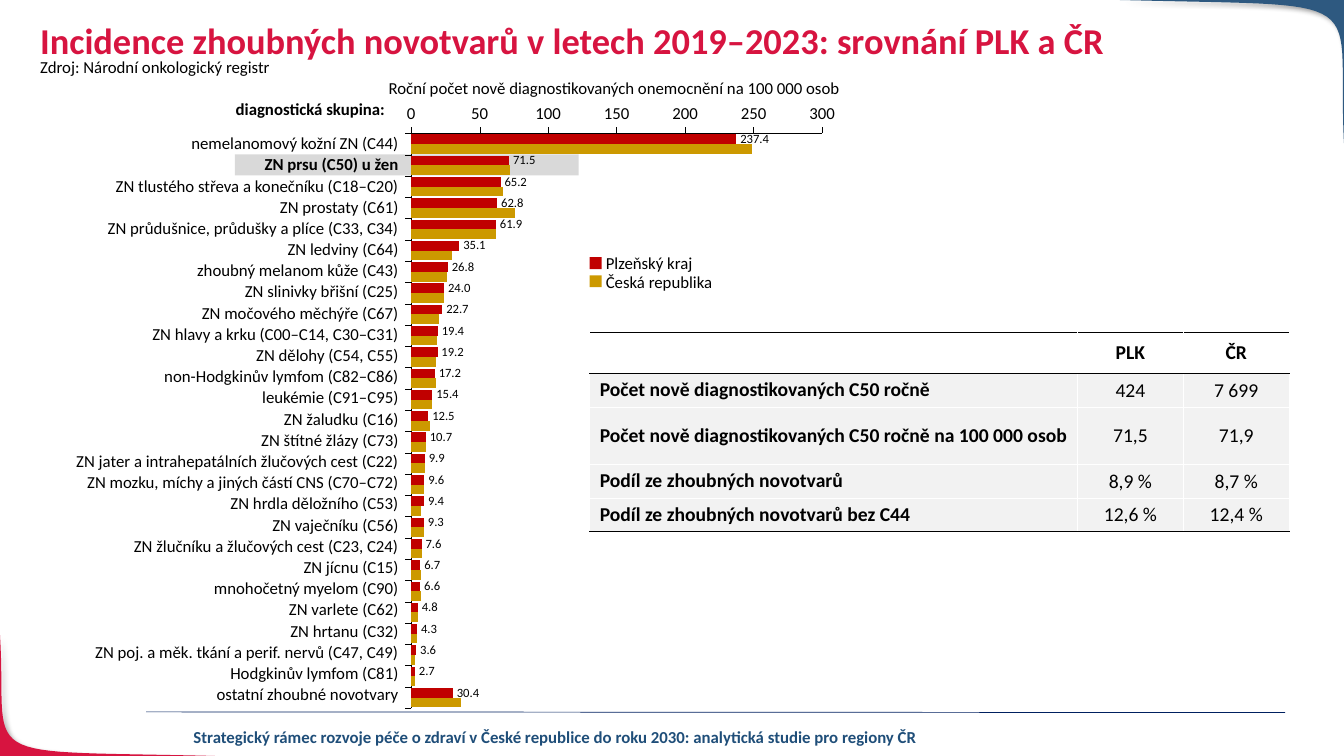
import pptx
import pptx.chart.data
import pptx.dml.color
import pptx.enum.chart
import pptx.enum.shapes
import pptx.enum.text
import pptx.oxml
import pptx.oxml.ns
import pptx.util

BLACK = pptx.dml.color.RGBColor(0x00, 0x00, 0x00)
WHITE = pptx.dml.color.RGBColor(0xFF, 0xFF, 0xFF)
CRIMSON = pptx.dml.color.RGBColor(0xD7, 0x14, 0x40)
STEEL = pptx.dml.color.RGBColor(0x2E, 0x59, 0x80)
NAVY = pptx.dml.color.RGBColor(0x00, 0x20, 0x60)
FOOTER_BLUE = pptx.dml.color.RGBColor(0x1F, 0x4E, 0x79)
HIGHLIGHT = pptx.dml.color.RGBColor(0xD9, 0xD9, 0xD9)
ROW_GREY = pptx.dml.color.RGBColor(0xF2, 0xF2, 0xF2)
REGION_RED = pptx.dml.color.RGBColor(0xC0, 0x00, 0x00)
COUNTRY_GOLD = pptx.dml.color.RGBColor(0xCC, 0x99, 0x00)
LEFT, CENTER, RIGHT = (pptx.enum.text.PP_ALIGN.LEFT, pptx.enum.text.PP_ALIGN.CENTER,
                       pptx.enum.text.PP_ALIGN.RIGHT)
MIDDLE, BOTTOM = pptx.enum.text.MSO_ANCHOR.MIDDLE, pptx.enum.text.MSO_ANCHOR.BOTTOM
NS = pptx.oxml.ns.nsdecls("a", "c")
NO_STYLE = "{2D5ABB26-0587-4C30-8999-92F81FD0307C}"

# diagnosis, yearly incidence in the region, in the country
DIAGNOSES = [
    ("nemelanomový kožní ZN (C44)", 237.4, 249),
    ("ZN prsu (C50) u žen", 71.5, 72),
    ("ZN tlustého střeva a konečníku (C18–C20)", 65.2, 67),
    ("ZN prostaty (C61)", 62.8, 76),
    ("ZN průdušnice, průdušky a plíce (C33, C34)", 61.9, 62),
    ("ZN ledviny (C64)", 35.1, 30),
    ("zhoubný melanom kůže (C43)", 26.8, 26),
    ("ZN slinivky břišní (C25)", 24, 24),
    ("ZN močového měchýře (C67)", 22.7, 20),
    ("ZN hlavy a krku (C00–C14, C30–C31)", 19.4, 19),
    ("ZN dělohy (C54, C55)", 19.2, 18),
    ("non-Hodgkinův lymfom (C82–C86)", 17.2, 18),
    ("leukémie (C91–C95)", 15.4, 15),
    ("ZN žaludku (C16)", 12.5, 14),
    ("ZN štítné žlázy (C73)", 10.7, 11),
    ("ZN jater a intrahepatálních žlučových cest (C22)", 9.9, 10),
    ("ZN mozku, míchy a jiných částí CNS (C70–C72)", 9.6, 9),
    ("ZN hrdla děložního (C53)", 9.4, 7),
    ("ZN vaječníku (C56)", 9.3, 9),
    ("ZN žlučníku a žlučových cest (C23, C24)", 7.6, 8),
    ("ZN jícnu (C15)", 6.7, 7),
    ("mnohočetný myelom (C90)", 6.6, 7),
    ("ZN varlete (C62)", 4.8, 5),
    ("ZN hrtanu (C32)", 4.3, 4),
    ("ZN poj. a měk. tkání a perif. nervů (C47, C49)", 3.6, 3),
    ("Hodgkinův lymfom (C81)", 2.7, 3),
    ("ostatní zhoubné novotvary", 30.4, 36),
]


def write(frame, text, align=LEFT, color=BLACK, spacing=None, **font_format):
    """Fill a text frame, one paragraph a line, in 12 pt Calibri unless told otherwise."""
    frame.text = text
    for paragraph in frame.paragraphs:
        paragraph.alignment = align
        paragraph.line_spacing = spacing
        for run in paragraph.runs:
            for key, value in {"name": "Calibri", "size": pptx.util.Pt(12),
                               "bold": False, **font_format}.items():
                setattr(run.font, key, value)
            run.font.color.rgb = color


def add_plain_table(row_count, widths, left, top, heights):
    """Add a table without style, with given column widths and row heights."""
    table = slide.shapes.add_table(
        row_count, len(widths),
        *map(pptx.util.Pt, (left, top, sum(widths), sum(heights)))).table
    table.first_row = table.horz_banding = False
    table._tbl.tblPr.find(pptx.oxml.ns.qn("a:tableStyleId")).text = NO_STYLE
    for column, width in zip(table.columns, widths):
        column.width = pptx.util.Pt(width)
    for row, height in zip(table.rows, heights):
        row.height = pptx.util.Pt(height)
    return table


deck = pptx.Presentation()
deck.slide_width, deck.slide_height = pptx.util.Pt(960), pptx.util.Pt(540)
slide = deck.slides.add_slide(deck.slide_layouts[6])

# Curved corners: a cubic curve and the slide corner it encloses
STEPS = 30
for curve, corner, color in [
    (((153.5, 540), (-24.5, 535.7), (5.8, 546.5), (0, 453.6)), (0, 540), CRIMSON),
    (((800, 0), (986.4, 5), (954.7, -7.2), (960, 102.2)), (960, 0), STEEL),
]:
    outline = []
    for step in range(STEPS + 1):
        t = step / STEPS
        weights = ((1 - t) ** 3, 3 * t * (1 - t) ** 2, 3 * t * t * (1 - t), t ** 3)
        outline.append([pptx.util.Pt(sum(w * p[axis] for w, p in zip(weights, curve)))
                        for axis in (0, 1)])
    outline.append([pptx.util.Pt(value) for value in corner])
    builder = slide.shapes.build_freeform(*outline[0])
    builder.add_line_segments(outline[1:], close=True)
    swoosh = builder.convert_to_shape()
    swoosh.fill.solid()
    swoosh.fill.fore_color.rgb = color
    swoosh.line.fill.background()
    swoosh._element.spPr.append(pptx.oxml.parse_xml(
        f'<a:effectLst {NS}><a:outerShdw blurRad="50800" dist="38100" dir="2700000">'
        '<a:srgbClr val="000000"><a:alpha val="40000"/></a:srgbClr>'
        '</a:outerShdw></a:effectLst>'))

footer_rule = slide.shapes.add_connector(
    pptx.enum.shapes.MSO_CONNECTOR.STRAIGHT, *map(pptx.util.Pt, (104.4, 508.5, 918, 509)))
footer_rule.line.color.rgb = NAVY
footer_rule.line.width = pptx.util.Pt(0.5)
footer_rule._element.spPr.append(pptx.oxml.parse_xml(f"<a:effectLst {NS}/>"))

# Highlighted diagnosis and legend keys
for box, color in [
    ((167.8, 110.2, 245.5, 15.1), HIGHLIGHT),
    ((421.2, 196.6, 8.6, 8.6), COUNTRY_GOLD),
    ((421.2, 183.6, 8.6, 8.6), REGION_RED),
]:
    block = slide.shapes.add_shape(pptx.enum.shapes.MSO_SHAPE.RECTANGLE,
                                   *map(pptx.util.Pt, box))
    block.shadow.inherit = False
    block.fill.solid()
    block.fill.fore_color.rgb = color
    block.line.fill.background()

NO_MARGINS = dict.fromkeys(("margin_left", "margin_top", "margin_right", "margin_bottom"), 0)
for box, text, text_format, frame_format in [
    ((72.7, 515.5, 648, 21.6),
     "Strategický rámec rozvoje péče o zdraví v České republice do roku 2030: "
     "analytická studie pro regiony ČR",
     {"align": CENTER, "color": FOOTER_BLUE, "bold": True}, {}),
    ((21.6, 13, 828, 42.5),
     "Incidence zhoubných novotvarů v letech 2019–2023: srovnání PLK a ČR",
     {"color": CRIMSON, "bold": True, "size": pptx.util.Pt(26), "spacing": 0.9}, {}),
    ((221, 51.8, 435.6, 21.6),
     "Roční počet nově diagnostikovaných onemocnění na 100 000 osob", {"align": CENTER}, {}),
    ((21.6, 36.7, 181.4, 21.6), "Zdroj: Národní onkologický registr", {},
     {"word_wrap": False}),
    ((61.2, 67, 221, 21.6), "diagnostická skupina:", {"align": RIGHT, "bold": True}, {}),
    ((432.7, 180, 147.6, 30.2), "Plzeňský kraj\nČeská republika", {"spacing": 0.95},
     {"vertical_anchor": MIDDLE, **NO_MARGINS}),
]:
    frame = slide.shapes.add_textbox(*map(pptx.util.Pt, box)).text_frame
    for key, value in {"word_wrap": True, **frame_format}.items():
        setattr(frame, key, value)
    write(frame, text, **text_format)

TIGHT = {"margin_left": pptx.util.Pt(0.5), "margin_right": pptx.util.Pt(0.5),
         "margin_top": pptx.util.Pt(0.5), "margin_bottom": 0}

# Summary of breast cancer
SUMMARY = [
    ("", "PLK", "ČR"),
    ("Počet nově diagnostikovaných C50 ročně", "424", "7 699"),
    ("Počet nově diagnostikovaných C50 ročně na 100 000 osob", "71,5", "71,9"),
    ("Podíl ze zhoubných novotvarů", "8,9 %", "8,7 %"),
    ("Podíl ze zhoubných novotvarů bez C44", "12,6 %", "12,4 %"),
]
summary_table = add_plain_table(len(SUMMARY), (348.5, 75.6, 75.6), 421.2, 237.6,
                                (29, 24, 41, 24, 24))
for r, values in enumerate(SUMMARY):
    top_color = BLACK if r in (0, 1) else WHITE
    bottom_color = BLACK if r in (0, len(SUMMARY) - 1) else WHITE
    for c, value in enumerate(values):
        cell = summary_table.cell(r, c)
        for side, color in zip("LRTB", (WHITE, WHITE, top_color, bottom_color)):
            cell._tc.get_or_add_tcPr().append(pptx.oxml.parse_xml(
                f'<a:ln{side} {NS} w="7620"><a:solidFill><a:srgbClr val="{color}"/>'
                f'</a:solidFill></a:ln{side}>'))
        cell.fill.solid()
        cell.fill.fore_color.rgb = ROW_GREY if r else WHITE
        cell.vertical_anchor = MIDDLE
        if r and c:
            for key, margin in TIGHT.items():
                setattr(cell, key, margin)
        write(cell.text_frame, value, CENTER if c else LEFT,
              size=pptx.util.Pt(14), bold=r == 0 or c == 0)

# Incidence chart
incidence = pptx.chart.data.CategoryChartData()
incidence.categories = [str(n + 1) for n in range(len(DIAGNOSES))]
_, region_values, country_values = zip(*DIAGNOSES)
incidence.add_series("Series 1", region_values)
incidence.add_series("Series 2", country_values)
chart = slide.shapes.add_chart(pptx.enum.chart.XL_CHART_TYPE.BAR_CLUSTERED,
                               *map(pptx.util.Pt, (274.3, 71.3, 329.8, 437.8)), incidence).chart
chart.has_title = chart.has_legend = False
plot = chart.plots[0]
plot.gap_width, plot.overlap, plot.vary_by_categories = 20, 0, False
for series, color in zip(plot.series, (REGION_RED, COUNTRY_GOLD)):
    series.format.fill.solid()
    series.format.fill.fore_color.rgb = color
labels = plot.series[0].data_labels
for key, value in {"show_value": True, "number_format": "#,##0.0",
                   "number_format_is_linked": False,
                   "position": pptx.enum.chart.XL_LABEL_POSITION.OUTSIDE_END}.items():
    setattr(labels, key, value)
for axis in (chart.category_axis, chart.value_axis):
    axis.has_major_gridlines = False
    axis.major_tick_mark = pptx.enum.chart.XL_TICK_MARK.OUTSIDE
    axis.format.line.color.rgb = BLACK
    axis.format.line.width = pptx.util.Pt(0.25)
chart.category_axis.reverse_order = True
chart.category_axis.tick_label_position = pptx.enum.chart.XL_TICK_LABEL_POSITION.NONE
for key, value in {"minimum_scale": 0, "maximum_scale": 300, "major_unit": 50}.items():
    setattr(chart.value_axis, key, value)
ticks = chart.value_axis.tick_labels
ticks.number_format, ticks.number_format_is_linked = "#,##0", False
for font, name, size, bold in [(chart.font, "Cabin", 15.4, True),
                               (labels.font, "Calibri", 9, False),
                               (ticks.font, "Calibri", 12, False)]:
    font.name, font.size, font.bold = name, pptx.util.Pt(size), bold
    font.color.rgb = BLACK
plot_area = chart._chartSpace.chart.plotArea
for old_layout in plot_area.findall(pptx.oxml.ns.qn("c:layout")):
    plot_area.remove(old_layout)
plot_area.insert(0, pptx.oxml.parse_xml(
    f'<c:layout {NS}><c:manualLayout><c:layoutTarget val="inner"/><c:xMode val="edge"/>'
    '<c:yMode val="edge"/><c:x val="0.059"/><c:y val="0.055"/><c:w val="0.89"/>'
    '<c:h val="0.938"/></c:manualLayout></c:layout>'))
NO_FILL = f"<c:spPr {NS}><a:noFill/><a:ln><a:noFill/></a:ln></c:spPr>"
plot_area.append(pptx.oxml.parse_xml(NO_FILL))
chart._chartSpace.chart.addnext(pptx.oxml.parse_xml(NO_FILL))

# Diagnosis names beside the bars
names_table = add_plain_table(len(DIAGNOSES), (254.2,), 31, 95, [15.15] * len(DIAGNOSES))
for r, (diagnosis, _, _) in enumerate(DIAGNOSES):
    cell = names_table.cell(r, 0)
    cell.fill.background()
    for key, value in {"vertical_anchor": BOTTOM, **TIGHT}.items():
        setattr(cell, key, value)
    write(cell.text_frame, diagnosis, RIGHT, bold="C50" in diagnosis)

deck.save("out.pptx")
